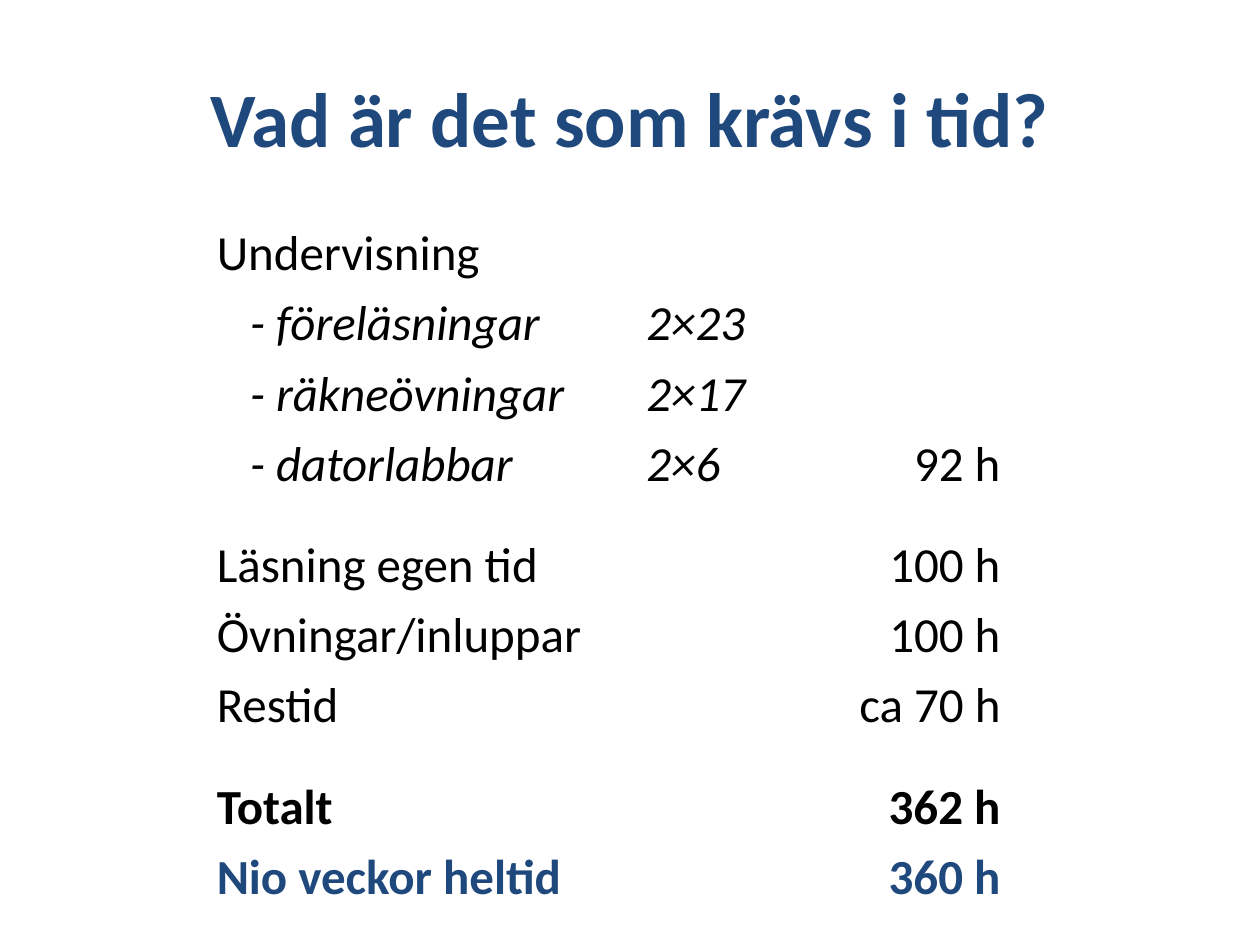
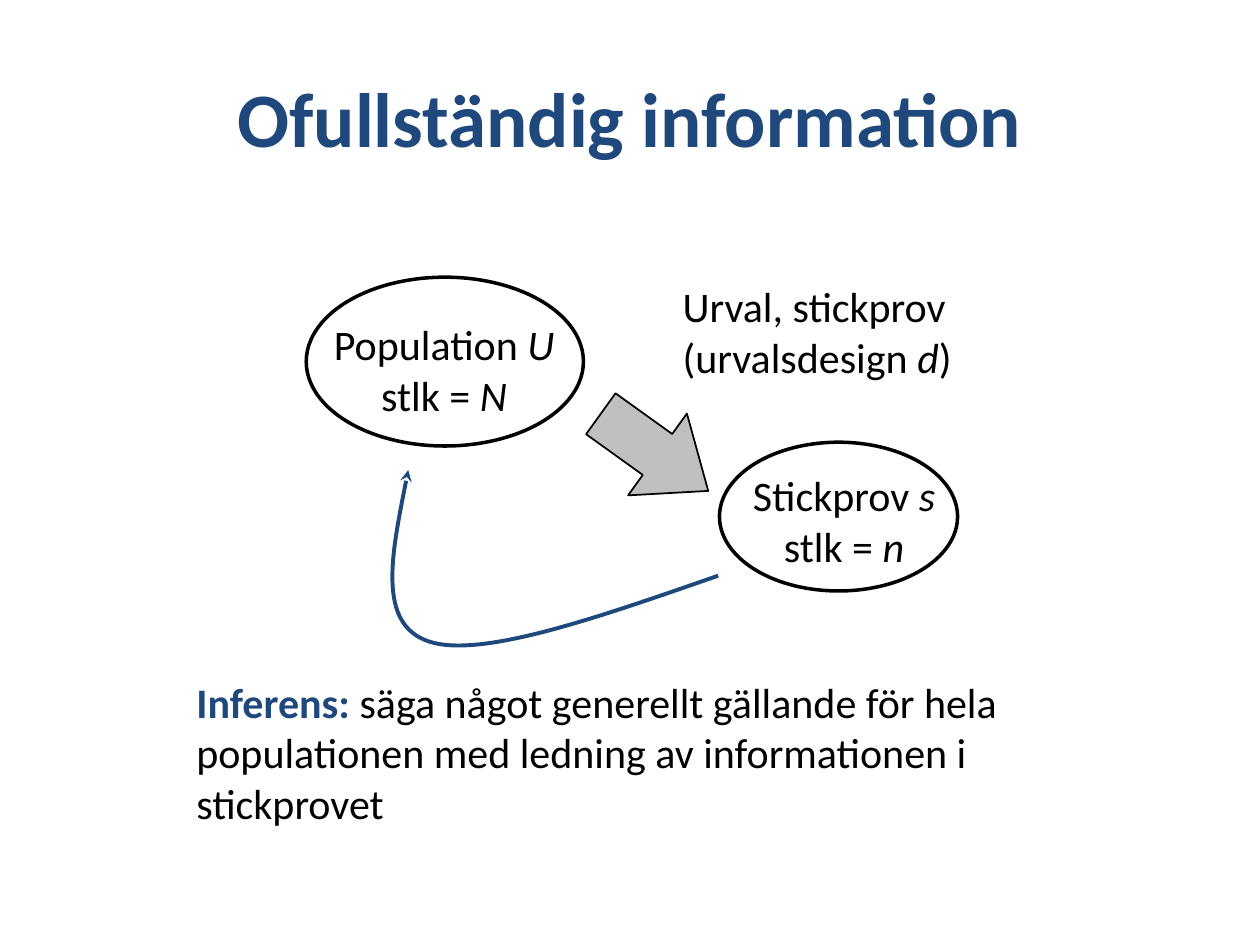
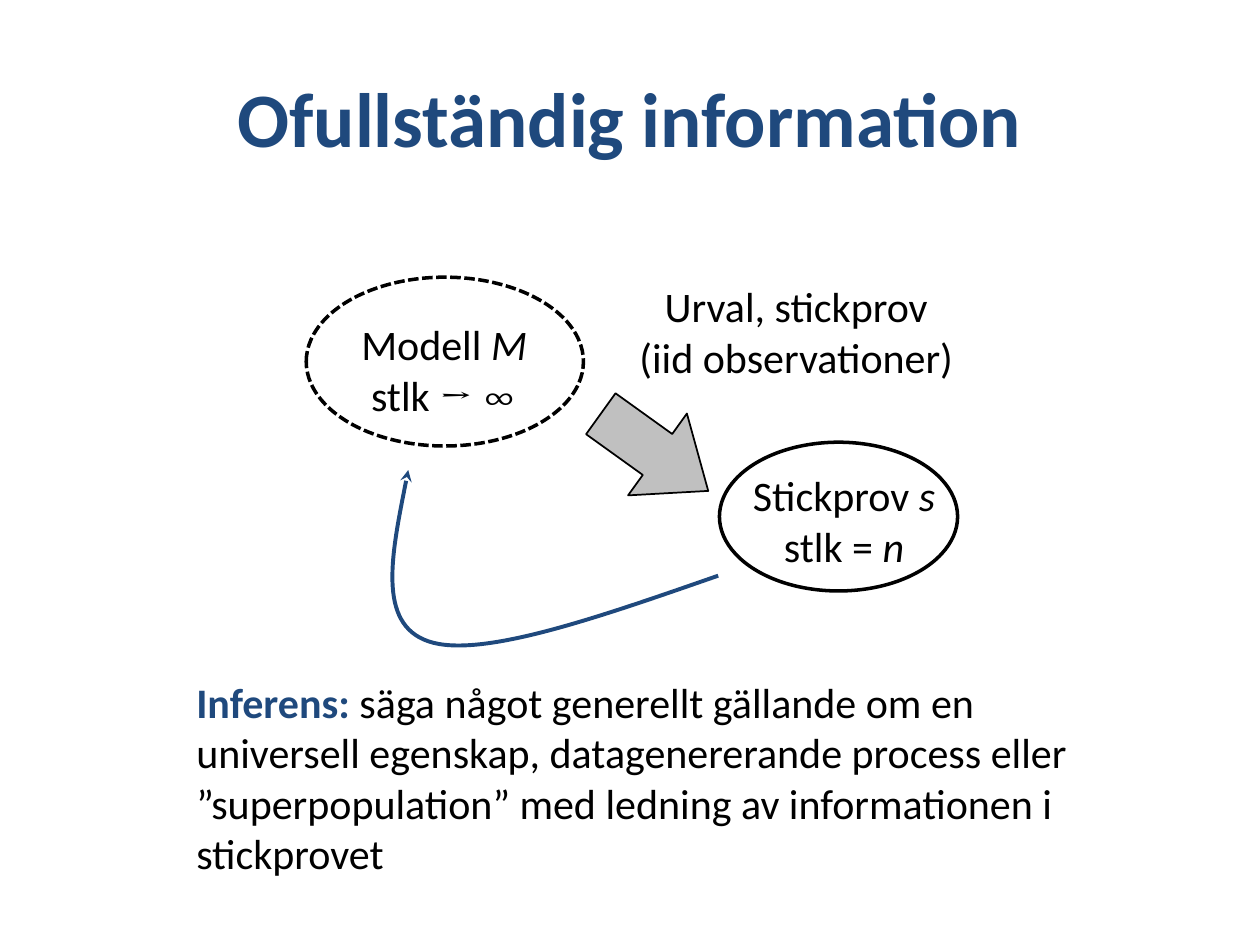
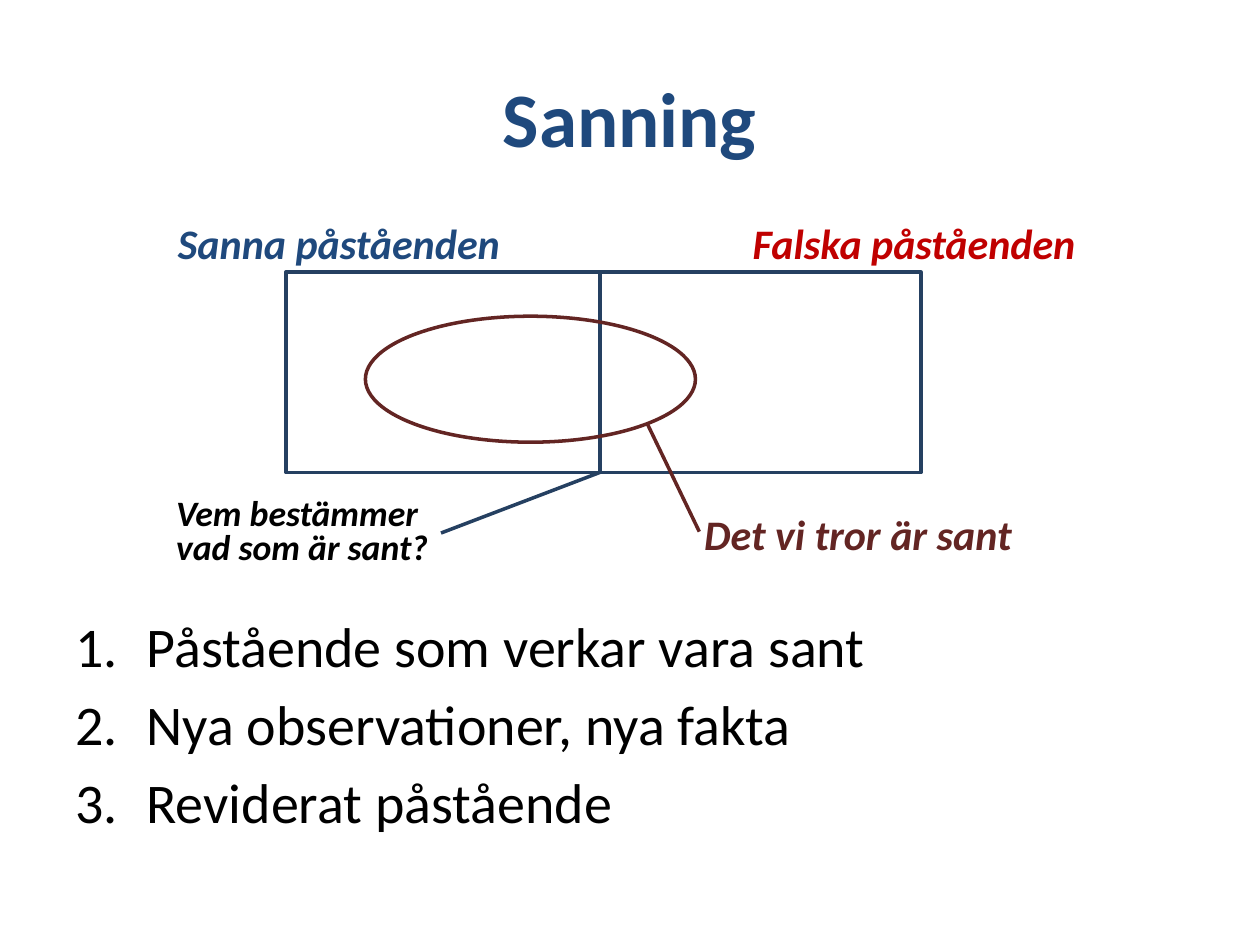
"""Build four statistics lecture slides: study time, two inference diagrams and truth."""
from dataclasses import dataclass

from lxml import etree
from pptx import Presentation
from pptx.dml.color import RGBColor
from pptx.enum import dml, shapes, text
from pptx.oxml import ns
from pptx.util import Pt


@dataclass(frozen=True)
class Theme:
    font: str = "Calibri"
    symbol_font: str = "Cambria"
    blue: str = "1F497D"
    navy: str = "254061"
    red: str = "C00000"
    maroon: str = "632523"
    black: str = "000000"
    gray: str = "C0C0C0"
    title: float = 44
    list: float = 32
    table: float = 28
    body: float = 24
    note: float = 20.4
    spacer: float = 8
    line: float = 2


theme = Theme()
LEFT, CENTER, RIGHT = text.PP_ALIGN.LEFT, text.PP_ALIGN.CENTER, text.PP_ALIGN.RIGHT


def write(frame, paragraphs, align=LEFT, line_spacing=None, **base):
    """Fill a frame with paragraphs, each a list of (text, format) runs."""
    for index, runs in enumerate(paragraphs):
        paragraph = frame.paragraphs[0] if index == 0 else frame.add_paragraph()
        paragraph.alignment = align
        if line_spacing:
            paragraph.line_spacing = line_spacing
        for words, changes in runs:
            style = {"size": theme.body, "color": theme.black, "font": theme.font,
                     "bold": False, "italic": False, **base, **changes}
            run = paragraph.add_run()
            run.text = words
            run.font.name = style["font"]
            run.font.size = Pt(style["size"])
            run.font.bold = style["bold"]
            run.font.italic = style["italic"]
            run.font.color.rgb = RGBColor.from_string(style["color"])


def draw(container, kind, box, color, width=theme.line, fill=None):
    """Add an outlined preset shape, open unless a fill is given."""
    shape = container.shapes.add_shape(kind, *map(Pt, box))
    shape.shadow.inherit = False
    shape.line.color.rgb = RGBColor.from_string(color)
    shape.line.width = Pt(width)
    if fill:
        shape.fill.solid()
        shape.fill.fore_color.rgb = RGBColor.from_string(fill)
    else:
        shape.fill.background()
    return shape


presentation = Presentation()
presentation.slide_width, presentation.slide_height = Pt(720), Pt(540)
title_only, title_and_body = presentation.slide_layouts[5], presentation.slide_layouts[1]

slides = []
for heading, layout in (
    ("Vad är det som krävs i tid?", title_only),
    ("Ofullständig information", title_only),
    ("Ofullständig information", title_only),
    ("Sanning", title_and_body),
):
    slide = presentation.slides.add_slide(layout)
    title = slide.shapes.title
    title.left, title.top, title.width, title.height = map(Pt, (36, 21.6, 648, 90))
    write(title.text_frame, [[(heading, {})]], align=CENTER,
          size=theme.title, color=theme.blue, bold=True)
    slides.append(slide)
time_slide, population_slide, model_slide, truth_slide = slides

italic, bold, total = {"italic": True}, {"bold": True}, {"bold": True, "color": theme.blue}
time_rows = [
    ("Undervisning", "", "", {}),
    ("- föreläsningar", "2×23", "", italic),
    ("- räkneövningar", "2×17", "", italic),
    ("- datorlabbar", "2×6", "92 h", italic),
    None,
    ("Läsning egen tid", "", "100 h", {}),
    ("Övningar/inluppar", "", "100 h", {}),
    ("Restid", "", "ca 70 h", {}),
    None,
    ("Totalt", "", "362 h", bold),
    ("Nio veckor heltid", "", "360 h", total),
]
table_shape = time_slide.shapes.add_table(
    len(time_rows), 3, Pt(114.5), Pt(125.3), Pt(466.6), Pt(387.4))
table = table_shape.table
table.first_row = table.horz_banding = False
for column, width in zip(table.columns, (245.5, 118.8, 102.3)):
    column.width = Pt(width)
for row, entry in zip(table.rows, time_rows):
    row.height = Pt(34 if entry else 18)
    for column_index, cell in enumerate(row.cells):
        cell.fill.background()
        cell.margin_left = cell.margin_right = Pt(9.4)
        cell.margin_top = cell.margin_bottom = Pt(2.9)
        if entry is None:
            etree.SubElement(cell.text_frame.paragraphs[0]._p, ns.qn("a:endParaRPr"),
                             sz=str(int(theme.spacer * 100)))
        elif entry[column_index]:
            style = dict(entry[3])
            if column_index == 2:
                style["italic"] = False
            if column_index == 0 and style.get("italic"):
                cell.margin_left = Pt(28.4)
            write(cell.text_frame, [[(entry[column_index], style)]],
                  align=RIGHT if column_index == 2 else LEFT, size=theme.table)
table_shape.height = Pt(387.4)

sample = [[("Stickprov ", {}), ("s", italic)], [("stlk = ", {}), ("n", italic)]]
diagrams = [
    (population_slide, None,
     (182.9, 141.8), [[("Population ", {}), ("U", italic)], [("stlk = ", {}), ("N", italic)]],
     (383, 169.9), LEFT,
     [[("Urval, stickprov", {})], [("(urvalsdesign ", {}), ("d", italic), (")", {})]],
     (481.7, 94.3),
     " säga något generellt gällande för hela populationen med ledning av "
     "informationen i stickprovet"),
    (model_slide, dml.MSO_LINE.SQUARE_DOT,
     (198.7, 110.2), [[("Modell ", {}), ("M", italic)],
                      [("stlk ", {}), ("→ ∞", {"font": theme.symbol_font})]],
     (357.1, 195.8), CENTER,
     [[("Urval, stickprov", {})], [("(iid observationer)", {})]],
     (521.3, 123.8),
     " säga något generellt gällande om en universell egenskap, datagenererande process "
     "eller ”superpopulation” med ledning av informationen i stickprovet"),
]
inference_curve = [(224.6, 312.5), (215.3, 356.4), (244.8, 366.5),
                   (274.3, 376.6), (342, 352.8), (410.4, 329)]
for (slide, dash, source_span, source, selection_span, selection_align, selection,
     inference_size, inference) in diagrams:
    sampling = slide.shapes.add_group_shape()
    for (left, width), top, lines, align in (
        (source_span, 178.6, source, CENTER),
        ((422.6, 119.5), 265, sample, CENTER),
        (selection_span, 157, selection, selection_align),
    ):
        label = sampling.shapes.add_textbox(Pt(left), Pt(top), Pt(width), Pt(65.5))
        label.text_frame.word_wrap = False
        label.text_frame.auto_size = text.MSO_AUTO_SIZE.SHAPE_TO_FIT_TEXT
        write(label.text_frame, lines, align=align)
    arrow = draw(sampling, shapes.MSO_SHAPE.RIGHT_ARROW, (336.2, 229.7, 75.6, 57.6),
                 theme.black, width=1, fill=theme.gray)
    arrow.rotation = 35.7
    arrow.adjustments[0], arrow.adjustments[1] = 0.5, 0.62
    source_oval = draw(sampling, shapes.MSO_SHAPE.OVAL, (175, 158.4, 158.4, 96.5), theme.black)
    if dash:
        source_oval.line.dash_style = dash
    draw(sampling, shapes.MSO_SHAPE.OVAL, (411.1, 252.7, 136.1, 85), theme.black)

    conclusion = slide.shapes.add_group_shape()
    builder = conclusion.shapes.build_freeform(Pt(233.3), Pt(268.6))
    builder.add_line_segments([(Pt(x), Pt(y)) for x, y in inference_curve], close=False)
    curve = builder.convert_to_shape()
    curve.shadow.inherit = False
    curve.fill.background()
    curve.line.color.rgb = RGBColor.from_string(theme.blue)
    curve.line.width = Pt(2.25)
    outline = curve.element.find(".//" + ns.qn("a:path"))
    segments = outline.findall(ns.qn("a:lnTo"))
    for start in range(0, len(segments), 3):
        bezier = etree.SubElement(outline, ns.qn("a:cubicBezTo"))
        for segment in segments[start:start + 3]:
            bezier.append(segment[0])
            outline.remove(segment)
    etree.SubElement(curve.element.find(".//" + ns.qn("a:ln")), ns.qn("a:headEnd"),
                     type="stealth")
    width, height = inference_size
    statement = conclusion.shapes.add_textbox(Pt(105.1), Pt(383), Pt(width), Pt(height))
    statement.text_frame.word_wrap = True
    statement.text_frame.auto_size = text.MSO_AUTO_SIZE.SHAPE_TO_FIT_TEXT
    write(statement.text_frame, [[("Inferens:", total), (inference, {})]])

body = truth_slide.placeholders[1]
body.left, body.top, body.width, body.height = map(Pt, (36, 345.6, 648, 173.5))
steps = ["Påstående som verkar vara sant", "Nya observationer, nya fakta", "Reviderat påstående"]
write(body.text_frame, [[(step, {})] for step in steps], size=theme.list)
for paragraph in body.text_frame.paragraphs:
    properties = paragraph._p.get_or_add_pPr()
    properties.set("marL", str(Pt(40.5)))
    properties.set("indent", str(-Pt(40.5)))
    etree.SubElement(properties, ns.qn("a:buFont"), typeface="+mj-lt")
    etree.SubElement(properties, ns.qn("a:buAutoNum"), type="arabicPeriod")

draw(truth_slide, shapes.MSO_SHAPE.RECTANGLE, (163.4, 155.5, 179.3, 114.5), theme.navy)
draw(truth_slide, shapes.MSO_SHAPE.RECTANGLE, (342.7, 155.5, 183.6, 114.5), theme.navy)
draw(truth_slide, shapes.MSO_SHAPE.OVAL, (208.8, 180.7, 188.6, 72), theme.maroon)

for words, (left, top, width), color, size, align, spacing in (
    ("Sanna påståenden", (57.6, 121, 272.2), theme.blue, theme.body, CENTER, None),
    ("Falska påståenden", (375.1, 121, 294.5), theme.red, theme.body, CENTER, None),
    ("Det vi tror är sant", (354.2, 287.3, 272.2), theme.maroon, theme.body, CENTER, None),
    ("Vem bestämmer vad som är sant?", (93.6, 281.5, 158.4), theme.black, theme.note, LEFT, 0.8),
):
    label = truth_slide.shapes.add_textbox(Pt(left), Pt(top), Pt(width), Pt(46.8))
    label.text_frame.word_wrap = True
    write(label.text_frame, [[(words, {})]], align=align, line_spacing=spacing,
          size=size, color=color, bold=True, italic=True)

for ends, color in (
    ((370.1, 242.6, 399.6, 303.8), theme.maroon),
    ((342.7, 270, 252, 304.6), theme.navy),
):
    pointer = truth_slide.shapes.add_connector(shapes.MSO_CONNECTOR.STRAIGHT, *map(Pt, ends))
    pointer.line.color.rgb = RGBColor.from_string(color)
    pointer.line.width = Pt(theme.line)
    etree.SubElement(pointer.element.spPr, ns.qn("a:effectLst"))

presentation.save("out.pptx")
